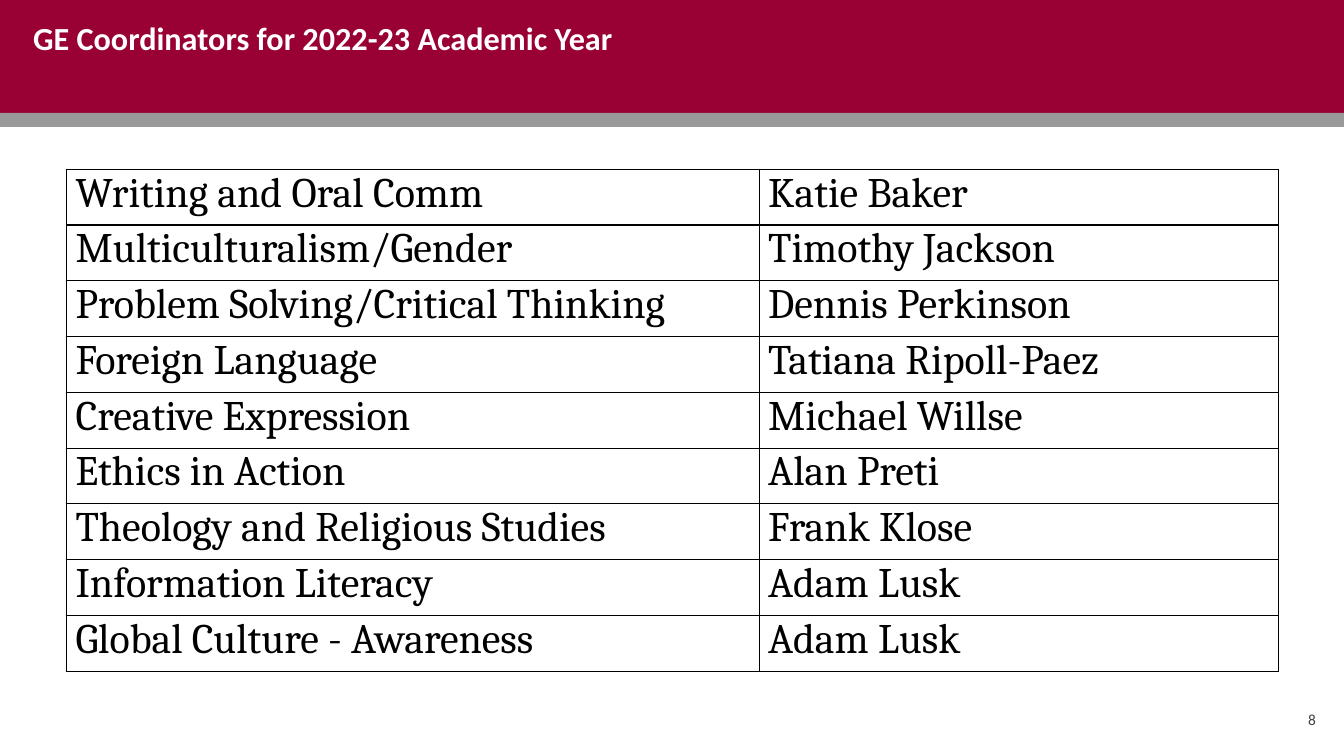
from dataclasses import dataclass

from lxml import etree
from pptx import Presentation
from pptx.dml.color import RGBColor
from pptx.enum.shapes import MSO_SHAPE
from pptx.enum.text import MSO_ANCHOR, PP_ALIGN
from pptx.oxml.ns import qn
from pptx.util import Inches, Pt

RECT = MSO_SHAPE.RECTANGLE
TOP, MIDDLE = MSO_ANCHOR.TOP, MSO_ANCHOR.MIDDLE
LEFT, RIGHT = PP_ALIGN.LEFT, PP_ALIGN.RIGHT

COLORS = {
    "crimson": "990033",
    "gray": "999999",
    "white": "FFFFFF",
    "black": "000000",
    "charcoal": "434343",
}
COLUMN_WIDTHS = (6.87, 5.15)
ROW_HEIGHT = 4.98 / 9


@dataclass
class Band:
    top: float
    height: float
    color: str


@dataclass
class Label:
    text: str
    box: tuple[float, float, float, float]
    size: float
    color: str
    bold: bool = False
    align: PP_ALIGN = LEFT
    anchor: MSO_ANCHOR = TOP
    line_spacing: float = 1.0


@dataclass
class Coordinator:
    area: str
    name: str


BANDS = [Band(-0.01, 1.13, "crimson"), Band(1.12, 0.14, "gray")]
LABELS = [
    Label("GE Coordinators for 2022-23 Academic Year", (0.23, 0.08, 12.42, 0.84),
          23, "white", bold=True),
    Label("8", (12.35, 6.92, 0.8, 0.45), 11, "charcoal",
          align=RIGHT, anchor=MIDDLE, line_spacing=0.9),
]
COORDINATORS = [
    Coordinator("Writing and Oral Comm", "Katie Baker"),
    Coordinator("Multiculturalism/Gender", "Timothy Jackson"),
    Coordinator("Problem Solving/Critical Thinking", "Dennis Perkinson"),
    Coordinator("Foreign Language", "Tatiana Ripoll-Paez"),
    Coordinator("Creative Expression", "Michael Willse"),
    Coordinator("Ethics in Action", "Alan Preti"),
    Coordinator("Theology and Religious Studies", "Frank Klose"),
    Coordinator("Information Literacy", "Adam Lusk"),
    Coordinator("Global Culture - Awareness", "Adam Lusk"),
]


def rgb(color: str) -> RGBColor:
    return RGBColor.from_string(COLORS[color])


def write_text(tf, text: str, *, font: str, size: float, color: str,
               bold: bool = False, align: PP_ALIGN = LEFT,
               line_spacing: float = 1.0) -> None:
    p = tf.paragraphs[0]
    p.alignment = align
    p.line_spacing = line_spacing
    r = p.add_run()
    r.text = text
    r.font.name = font
    r.font.size = Pt(size)
    r.font.bold = bold
    r.font.color.rgb = rgb(color)


def draw_band(s, band: Band) -> None:
    sp = s.shapes.add_shape(RECT, Inches(-0.01), Inches(band.top),
                            Inches(13.35), Inches(band.height))
    sp.shadow.inherit = False
    sp.fill.solid()
    sp.fill.fore_color.rgb = rgb(band.color)
    sp.line.fill.background()


def draw_label(s, label: Label) -> None:
    tf = s.shapes.add_textbox(*map(Inches, label.box)).text_frame
    tf.word_wrap = True
    tf.vertical_anchor = label.anchor
    tf.margin_left = tf.margin_right = Inches(0.1)
    tf.margin_top = tf.margin_bottom = Inches(0.1)
    write_text(tf, label.text, font="Calibri", size=label.size,
               color=label.color, bold=label.bold, align=label.align,
               line_spacing=label.line_spacing)


def add_borders(cell) -> None:
    tc_pr = cell._tc.get_or_add_tcPr()
    for index, side in enumerate(("lnL", "lnR", "lnT", "lnB")):
        line = etree.Element(qn(f"a:{side}"), w=str(Pt(1)))
        fill = etree.SubElement(line, qn("a:solidFill"))
        etree.SubElement(fill, qn("a:srgbClr"), val=COLORS["black"])
        tc_pr.insert(index, line)


def draw_table(s, coordinators: list[Coordinator]) -> None:
    count = len(coordinators)
    table = s.shapes.add_table(
        count, len(COLUMN_WIDTHS), Inches(0.66), Inches(1.68),
        Inches(sum(COLUMN_WIDTHS)), Inches(ROW_HEIGHT * count)).table
    table.first_row = table.horz_banding = False
    for column, width in zip(table.columns, COLUMN_WIDTHS):
        column.width = Inches(width)
    for row, coordinator in zip(table.rows, coordinators):
        row.height = Inches(ROW_HEIGHT)
        for cell, text in zip(row.cells, (coordinator.area, coordinator.name)):
            cell.fill.background()
            cell.margin_left = cell.margin_right = Inches(0.09)
            cell.margin_top = cell.margin_bottom = 0
            add_borders(cell)
            write_text(cell.text_frame, text, font="Cambria", size=30, color="black")


def main() -> None:
    prs = Presentation()
    prs.slide_width, prs.slide_height = Inches(13.33), Inches(7.5)
    s = prs.slides.add_slide(prs.slide_layouts[6])
    for band in BANDS:
        draw_band(s, band)
    for label in LABELS:
        draw_label(s, label)
    draw_table(s, COORDINATORS)
    prs.save("out.pptx")


if __name__ == "__main__":
    main()
